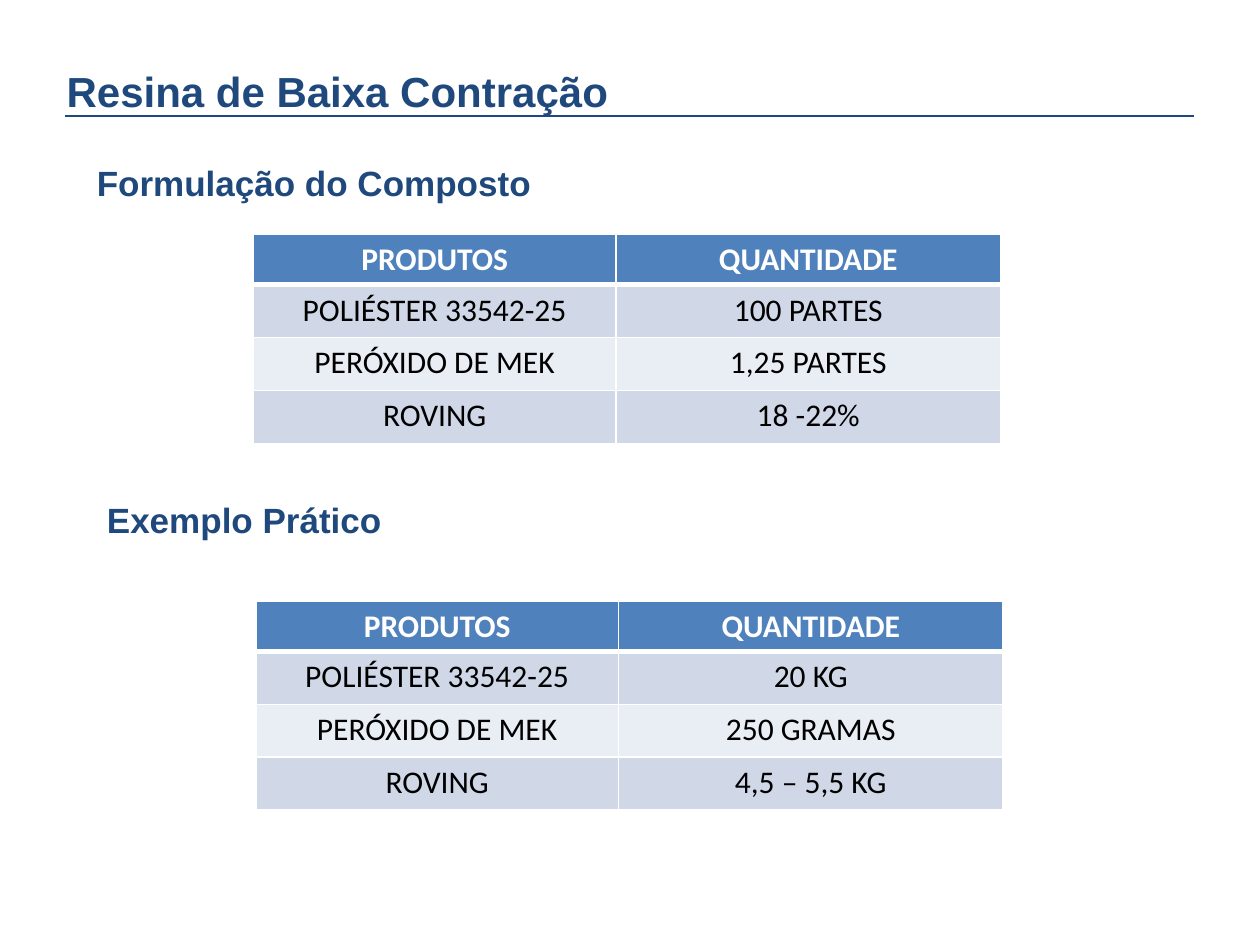
from dataclasses import dataclass

from lxml import etree
from pptx import Presentation
from pptx.dml.color import RGBColor
from pptx.enum.shapes import MSO_CONNECTOR
from pptx.enum.text import PP_ALIGN
from pptx.oxml.ns import qn
from pptx.util import Inches, Pt

LEFT, CENTER = PP_ALIGN.LEFT, PP_ALIGN.CENTER
STRAIGHT = MSO_CONNECTOR.STRAIGHT


@dataclass(frozen=True)
class Theme:
    navy: str = "1F497D"
    header: str = "4F81BD"
    bands: tuple = ("D0D8E8", "E9EDF4")
    white: str = "FFFFFF"
    black: str = "000000"
    title_size: int = 24
    heading_size: int = 20
    cell_size: int = 18
    heading_font: str = "Arial"
    cell_font: str = "Calibri"


THEME = Theme()


def write_text(frame, text, *, size, font=THEME.heading_font,
               color=THEME.navy, bold=True, align=LEFT):
    paragraph = frame.paragraphs[0]
    paragraph.alignment = align
    run = paragraph.add_run()
    run.text = text
    run.font.name = font
    run.font.size = Pt(size)
    run.font.bold = bold
    run.font.color.rgb = RGBColor.from_string(color)


def set_borders(cell, bottom_width):
    """Draw white cell borders; they must precede the fill in the XML."""
    properties = cell._tc.get_or_add_tcPr()
    for tag, width in (("a:lnL", 1), ("a:lnR", 1), ("a:lnT", 1), ("a:lnB", bottom_width)):
        line = etree.SubElement(properties, qn(tag), w=str(Pt(width)))
        fill = etree.SubElement(line, qn("a:solidFill"))
        etree.SubElement(fill, qn("a:srgbClr"), val=THEME.white)


presentation = Presentation()
presentation.slide_width = Inches(10)
presentation.slide_height = Inches(7.5)
slide = presentation.slides.add_slide(presentation.slide_layouts[6])

title_rule = slide.shapes.add_connector(
    STRAIGHT, Inches(0.52), Inches(0.92), Inches(9.48), Inches(0.92))
title_rule.line.color.rgb = RGBColor.from_string(THEME.navy)
title_rule.line.width = Pt(1.5)
etree.SubElement(title_rule._element.spPr, qn("a:effectLst"))

headings = [
    ("Resina de Baixa Contração", 0.43, 0.44, 5.81, 0.63, THEME.title_size, 0.08),
    ("Formulação do Composto", 0.67, 1.23, 4.17, 0.44, THEME.heading_size, 0.05),
    ("Exemplo Prático", 0.75, 3.91, 3.15, 0.44, THEME.heading_size, 0.05),
]
for text, left, top, width, height, size, top_inset in headings:
    heading = slide.shapes.add_textbox(
        Inches(left), Inches(top), Inches(width), Inches(height)).text_frame
    heading.word_wrap = True
    heading.margin_top = Inches(top_inset)
    write_text(heading, text, size=size)

products = ["POLIÉSTER 33542-25", "PERÓXIDO DE MEK", "ROVING"]
column_widths = [2.88, 3.05]
row_heights = [0.4, 0.42, 0.42, 0.42]
formulations = [
    (2.01, 1.86, ["100 PARTES", "1,25 PARTES", "18 -22%"]),
    (2.03, 4.77, ["20 KG", "250 GRAMAS", "4,5 – 5,5 KG"]),
]
for left, top, quantities in formulations:
    rows = [("PRODUTOS", "QUANTIDADE"), *zip(products, quantities)]
    table = slide.shapes.add_table(
        len(rows), len(column_widths), Inches(left), Inches(top),
        Inches(sum(column_widths)), Inches(sum(row_heights))).table
    for column, width in zip(table.columns, column_widths):
        column.width = Inches(width)
    for r, (row, height) in enumerate(zip(rows, row_heights)):
        table.rows[r].height = Inches(height)
        is_header = r == 0
        for c, text in enumerate(row):
            cell = table.cell(r, c)
            set_borders(cell, 3 if is_header else 1)
            cell.fill.solid()
            cell.fill.fore_color.rgb = RGBColor.from_string(
                THEME.header if is_header else THEME.bands[(r - 1) % 2])
            write_text(cell.text_frame, text, size=THEME.cell_size,
                       font=THEME.cell_font, bold=is_header, align=CENTER,
                       color=THEME.white if is_header else THEME.black)

presentation.save("out.pptx")
